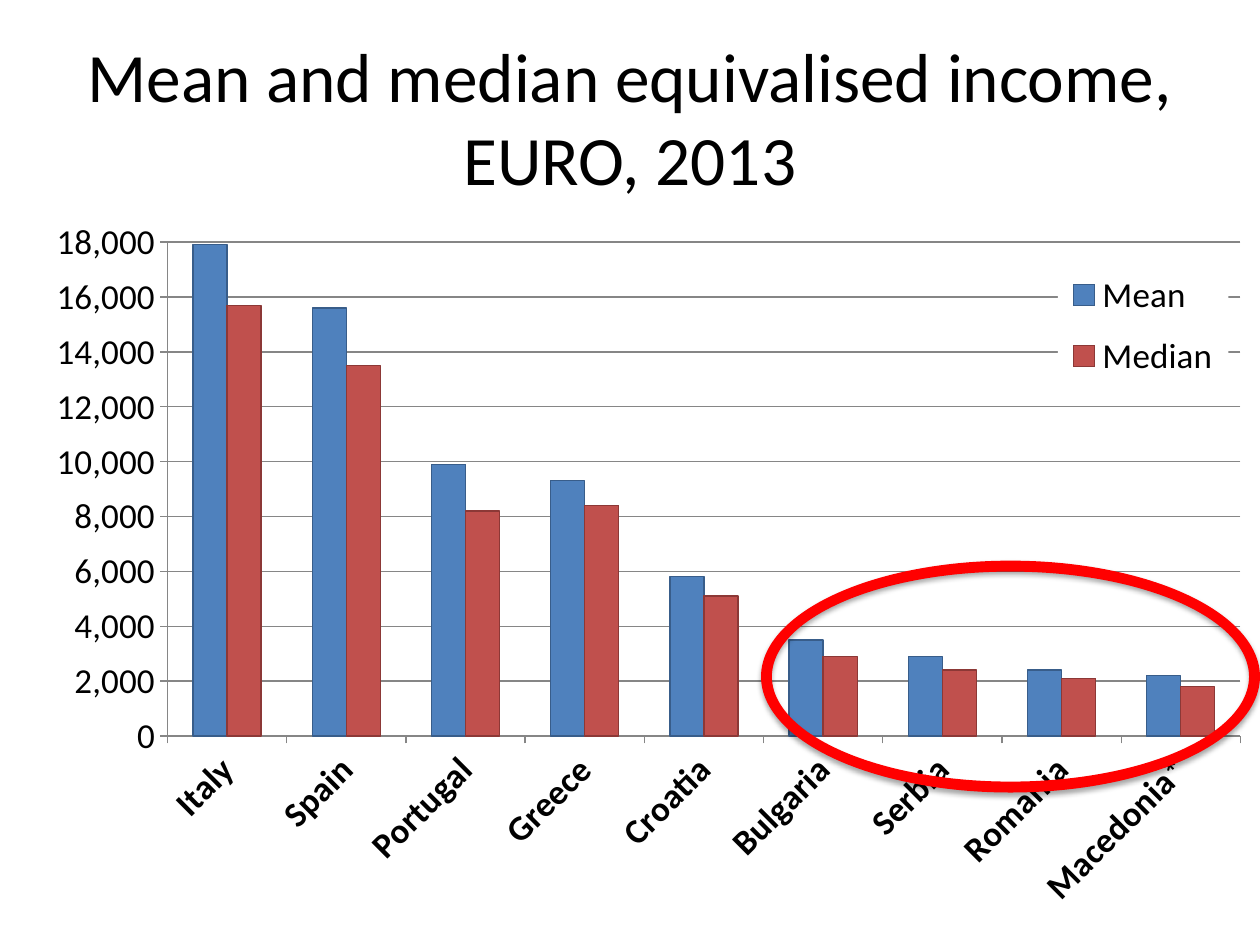
from typing import NamedTuple

from lxml import etree
from pptx import Presentation
from pptx.chart.data import CategoryChartData
from pptx.dml.color import RGBColor
from pptx.enum.chart import XL_CHART_TYPE, XL_LEGEND_POSITION, XL_TICK_MARK
from pptx.enum.shapes import MSO_SHAPE
from pptx.enum.text import MSO_ANCHOR, PP_ALIGN
from pptx.oxml import parse_xml
from pptx.oxml.ns import nsdecls, qn
from pptx.util import Inches, Pt

FONT = "Calibri"
BLACK, WHITE, GREY, RED = "000000", "FFFFFF", "868686", "FF0000"


class Box(NamedTuple):
    left: float
    top: float
    width: float
    height: float

    def lengths(self) -> list:
        return [Inches(value) for value in self]


class IncomeSeries(NamedTuple):
    name: str
    values: tuple
    fill: str
    outline: str


COUNTRIES = ("Italy", "Spain", "Portugal", "Greece", "Croatia",
             "Bulgaria", "Serbia", "Romania", "Macedonia*")
INCOMES = (
    IncomeSeries("Mean", (17900, 15600, 9900, 9300, 5800, 3500, 2900, 2400, 2200),
                 "4F81BD", "385D8A"),
    IncomeSeries("Median", (15700, 13500, 8200, 8400, 5100, 2900, 2400, 2100, 1800),
                 "C0504D", "8C3836"),
)


def set_color(color_format, value: str) -> None:
    """Apply a hex colour to a font, or to a fill or line format."""
    if hasattr(color_format, "solid"):
        color_format.solid()
        color_format.fore_color.rgb = RGBColor.from_string(value)
    else:
        color_format.color.rgb = RGBColor.from_string(value)


def set_font(font, size: float, bold: bool = False) -> None:
    font.name = FONT
    font.size = Pt(size)
    font.bold = bold
    set_color(font, BLACK)


def layout_xml(box: Box, inner: bool = False):
    """Manual chart layout, in fractions of the chart area."""
    target = '<c:layoutTarget val="inner"/>' if inner else ""
    modes = '<c:xMode val="edge"/><c:yMode val="edge"/>'
    sizes = "".join(f'<c:{tag} val="{value}"/>' for tag, value in zip("xywh", box))
    return parse_xml(f'<c:layout {nsdecls("c")}><c:manualLayout>'
                     f'{target}{modes}{sizes}</c:manualLayout></c:layout>')


def add_title(slide, text: str, box: Box) -> None:
    frame = slide.shapes.add_textbox(*box.lengths()).text_frame
    frame.word_wrap = True
    frame.vertical_anchor = MSO_ANCHOR.MIDDLE
    paragraph = frame.paragraphs[0]
    paragraph.text = text
    paragraph.alignment = PP_ALIGN.CENTER
    set_font(paragraph.font, 39.6)


def style_axes(chart) -> None:
    category_axis, value_axis = chart.category_axis, chart.value_axis
    for axis in (category_axis, value_axis):
        axis.major_tick_mark = XL_TICK_MARK.OUTSIDE
        axis.minor_tick_mark = XL_TICK_MARK.NONE
        set_font(axis.tick_labels.font, 20, bold=axis is category_axis)
        set_color(axis.format.line, GREY)
    category_axis._element.txPr.find(qn("a:bodyPr")).set("rot", "-2700000")
    value_axis.minimum_scale = 0
    value_axis.maximum_scale = 18000
    value_axis.major_unit = 2000
    value_axis.tick_labels.number_format = "#,##0"
    value_axis.tick_labels.number_format_is_linked = False
    value_axis.has_major_gridlines = True
    set_color(value_axis.major_gridlines.format.line, GREY)


def style_legend(chart, box: Box) -> None:
    chart.has_legend = True
    legend = chart.legend
    legend.position = XL_LEGEND_POSITION.RIGHT
    legend.include_in_layout = False
    set_font(legend.font, 20)
    element = legend._element
    for old_layout in element.findall(qn("c:layout")):
        element.remove(old_layout)
    element.find(qn("c:legendPos")).addnext(layout_xml(box))
    element.find(qn("c:txPr")).addprevious(parse_xml(
        f'<c:spPr {nsdecls("c", "a")}><a:solidFill><a:srgbClr val="{WHITE}"/>'
        '</a:solidFill></c:spPr>'))


def add_income_chart(slide, box: Box) -> None:
    data = CategoryChartData(number_format="#,##0")
    data.categories = COUNTRIES
    for income in INCOMES:
        data.add_series(income.name, income.values)
    chart = slide.shapes.add_chart(
        XL_CHART_TYPE.COLUMN_CLUSTERED, *box.lengths(), data).chart
    chart.has_title = False
    set_font(chart.font, 20)
    plot = chart.plots[0]
    plot.gap_width = 150
    plot.overlap = 0
    plot.vary_by_categories = False
    for series, income in zip(plot.series, INCOMES):
        set_color(series.format.fill, income.fill)
        set_color(series.format.line, income.outline)
        series.format.line.width = Pt(0.75)
    style_axes(chart)
    style_legend(chart, Box(0.85, 0.05, 0.14, 0.2))
    plot_area = chart._chartSpace.chart.plotArea
    for old_layout in plot_area.findall(qn("c:layout")):
        plot_area.remove(old_layout)
    plot_area.insert(0, layout_xml(Box(0.118, 0.03, 0.882, 0.711), inner=True))


def add_highlight_ring(slide, box: Box) -> None:
    ring = slide.shapes.add_shape(MSO_SHAPE.DONUT, *box.lengths())
    ring.adjustments[0] = 0.047
    set_color(ring.fill, RED)
    ring.line.fill.background()
    ring.shadow.inherit = False
    effects = ring._element.spPr.find(qn("a:effectLst"))
    shadow = etree.SubElement(
        effects, qn("a:outerShdw"), blurRad=str(Pt(3.1)), dist=str(Pt(1.8)),
        dir="5400000", rotWithShape="0")
    color = etree.SubElement(shadow, qn("a:srgbClr"), val=BLACK)
    etree.SubElement(color, qn("a:alpha"), val="35000")


def main() -> None:
    presentation = Presentation()
    presentation.slide_width = Inches(10)
    presentation.slide_height = Inches(7.5)
    slide = presentation.slides.add_slide(presentation.slide_layouts[6])
    add_title(slide, "Mean and median equivalised income, EURO, 2013",
              Box(0.5, 0.3, 9, 1.25))
    add_income_chart(slide, Box(0.19, 1.75, 9.66, 5.52))
    add_highlight_ring(slide, Box(6.04, 4.45, 3.96, 1.84))
    presentation.save("out.pptx")


if __name__ == "__main__":
    main()
